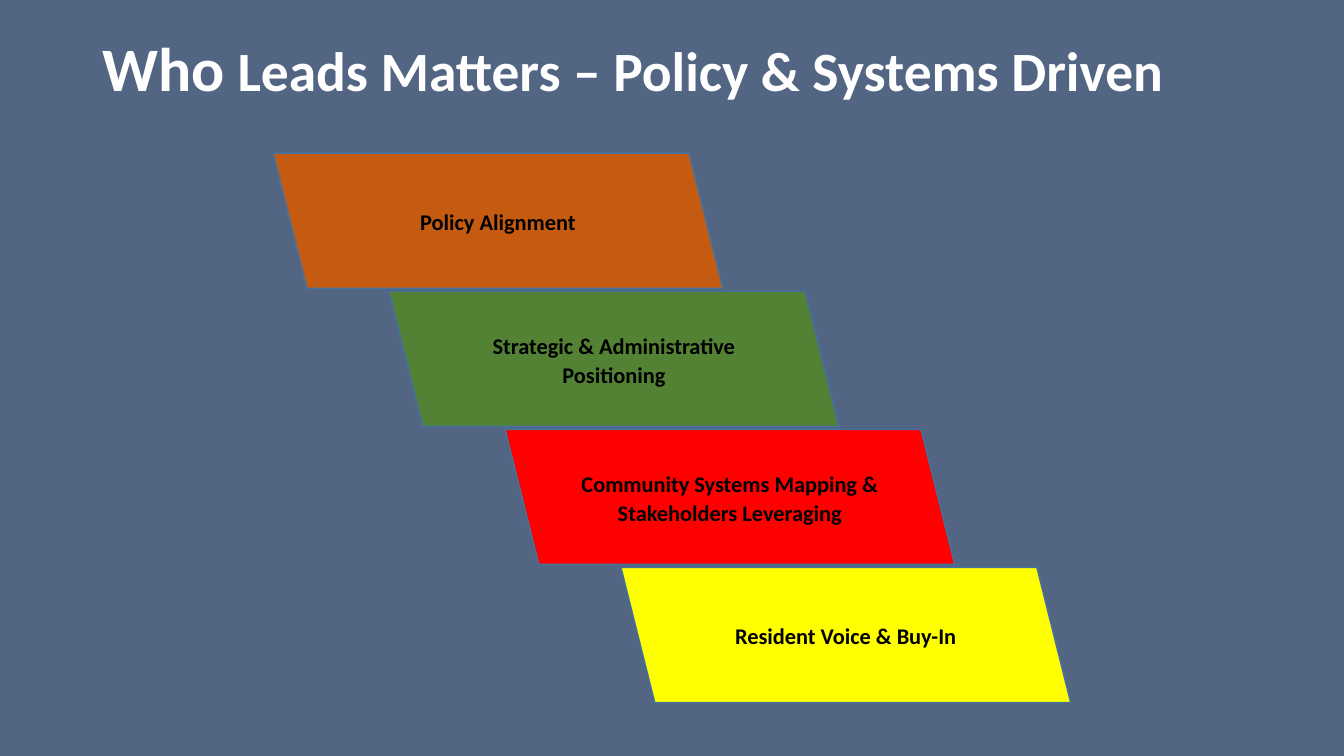
from dataclasses import dataclass

from pptx import Presentation
from pptx.dml.color import RGBColor
from pptx.enum.shapes import MSO_SHAPE as Shape
from pptx.enum.text import MSO_ANCHOR as Anchor, PP_ALIGN as Align
from pptx.oxml.ns import qn
from pptx.util import Inches, Pt


@dataclass(frozen=True)
class Theme:
    font: str = "Calibri"
    background: str = "526582"
    title: str = "FFFFFF"
    label: str = "000000"
    outline: str = "43739E"
    lead_size: float = 44.1
    title_size: float = 39.6
    label_size: float = 16


class SlideBuilder:
    def __init__(self, page, theme):
        self.page = page
        self.theme = theme
        page.background.fill.solid()
        page.background.fill.fore_color.rgb = RGBColor.from_string(theme.background)

    def add_span(self, para, text, size, color):
        span = para.add_run()
        span.text = text
        span.font.name = self.theme.font
        span.font.size = Pt(size)
        span.font.bold = True
        span.font.color.rgb = RGBColor.from_string(color)

    def add_title(self, lead, rest, left, top, width, height):
        box = self.page.shapes.add_textbox(
            Inches(left), Inches(top), Inches(width), Inches(height)
        )
        frame = box.text_frame
        frame.word_wrap = True
        frame.vertical_anchor = Anchor.MIDDLE
        para = frame.paragraphs[0]
        para.line_spacing = 0.9
        self.add_span(para, lead, self.theme.lead_size, self.theme.title)
        self.add_span(para, rest, self.theme.title_size, self.theme.title)

    def add_step(self, text, fill, left, top, width, height):
        step = self.page.shapes.add_shape(
            Shape.PARALLELOGRAM, Inches(left), Inches(top), Inches(width), Inches(height)
        )
        step.element.spPr.find(qn("a:xfrm")).set("flipH", "1")
        step.shadow.inherit = False
        step.fill.solid()
        step.fill.fore_color.rgb = RGBColor.from_string(fill)
        step.line.color.rgb = RGBColor.from_string(self.theme.outline)
        step.line.width = Pt(1)
        frame = step.text_frame
        frame.word_wrap = True
        frame.vertical_anchor = Anchor.MIDDLE
        para = frame.paragraphs[0]
        para.alignment = Align.CENTER
        para.line_spacing = 1.07
        para.space_after = Pt(8)
        self.add_span(para, text, self.theme.label_size, self.theme.label)


STEPS = [
    ("Policy Alignment", "C55A11"),
    ("Strategic & Administrative Positioning", "548235"),
    ("Community Systems Mapping & Stakeholders Leveraging", "FF0000"),
    ("Resident Voice & Buy-In", "FFFF00"),
]


def main():
    deck = Presentation()
    deck.slide_width = Inches(13.33)
    deck.slide_height = Inches(7.5)
    page = deck.slides.add_slide(deck.slide_layouts[6])
    builder = SlideBuilder(page, Theme())
    builder.add_title(
        "Who", " Leads Matters – Policy & Systems Driven", 0.92, 0.4, 11.5, 0.61
    )
    for index, (text, fill) in enumerate(STEPS):
        builder.add_step(text, fill, 2.71 + 1.15 * index, 1.52 + 1.37 * index, 4.46, 1.34)
    deck.save("out.pptx")


if __name__ == "__main__":
    main()
